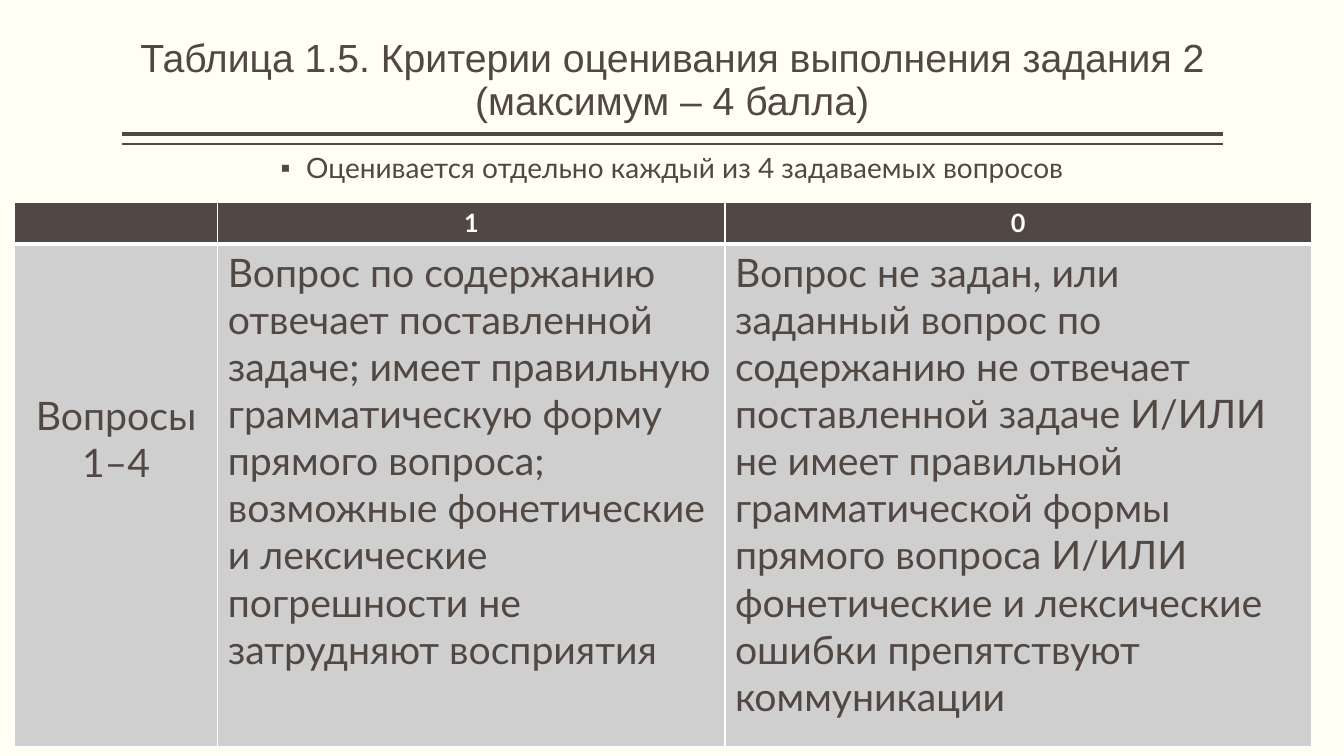
from dataclasses import dataclass

from lxml.etree import SubElement
from pptx import Presentation
from pptx.dml.color import RGBColor
from pptx.enum.shapes import MSO_CONNECTOR as Link
from pptx.enum.text import MSO_ANCHOR as Anchor
from pptx.enum.text import MSO_AUTO_SIZE as Fit
from pptx.enum.text import PP_ALIGN as Align
from pptx.oxml.ns import qn
from pptx.util import Cm, Pt

CREAM = RGBColor(0xFF, 0xFF, 0xF3)
BROWN = RGBColor(0x51, 0x48, 0x43)
GREY = RGBColor(0xD0, 0xCF, 0xCF)
WHITE = RGBColor(0xFF, 0xFF, 0xFF)

LEFT, WIDTH = 3.07, 27.74
COLS = (5.13, 12.78, 14.78)
ROWS = (0.99, 12.67)


@dataclass
class Rule:
    top: float
    weight: float


@dataclass
class Entry:
    text: str
    align: Align = Align.LEFT
    pad: float = 0.13


@dataclass
class Look:
    fill: RGBColor
    color: RGBColor
    size: int
    bold: bool
    above: int
    below: int


RULES = (Rule(3.38, 3), Rule(3.63, 1))

HEAD = Look(BROWN, WHITE, 18, True, 1, 3)
BODY = Look(GREY, BROWN, 28, False, 3, 1)

TABLE = (
    (HEAD, (Entry(""), Entry("1", Align.CENTER), Entry("0", Align.CENTER))),
    (BODY, (
        Entry("Вопросы 1–4", Align.CENTER, 3.73),
        Entry("Вопрос по содержанию отвечает поставленной задаче; имеет "
              "правильную грамматическую форму прямого вопроса; возможные "
              "фонетические и лексические погрешности не затрудняют "
              "восприятия"),
        Entry("Вопрос не задан, или заданный вопрос по содержанию не "
              "отвечает поставленной задаче И/ИЛИ не имеет правильной "
              "грамматической формы прямого вопроса И/ИЛИ фонетические и "
              "лексические ошибки препятствуют коммуникации"),
    )),
)


def style(para, face: str, size: int, color: RGBColor, bold: bool = False) -> None:
    for run in para.runs:
        font = run.font
        font.name, font.size, font.bold = face, Pt(size), bold
        font.color.rgb = color


def write(holder, text: str, top: float, height: float, face: str, size: int,
          anchor: Anchor):
    """Place and fill a placeholder; return its paragraph."""
    holder.left, holder.top = Cm(LEFT), Cm(top)
    holder.width, holder.height = Cm(WIDTH), Cm(height)
    frame = holder.text_frame
    frame.text = text
    frame.word_wrap, frame.auto_size = True, Fit.NONE
    frame.vertical_anchor = anchor
    frame.margin_left = frame.margin_right = 0
    frame.margin_top = frame.margin_bottom = Cm(0.13)
    para = frame.paragraphs[0]
    para.alignment, para.line_spacing = Align.CENTER, 0.9
    style(para, face, size, BROWN)
    return para


def bullet(para, mark: str) -> None:
    props = para._p.get_or_add_pPr()
    props.set("marL", str(Cm(0.64)))
    props.set("indent", str(-Cm(0.64)))
    SubElement(props, qn("a:buChar"), char=mark)


def draw_rule(slide, rule: Rule) -> None:
    line = slide.shapes.add_connector(
        Link.STRAIGHT, Cm(LEFT), Cm(rule.top), Cm(LEFT + WIDTH), Cm(rule.top))
    line.line.color.rgb, line.line.width = BROWN, Pt(rule.weight)
    SubElement(line._element.spPr, qn("a:effectLst"))


def border(cell, look: Look) -> None:
    props = cell._tc.get_or_add_tcPr()
    edges = {"lnL": 1, "lnR": 1, "lnT": look.above, "lnB": look.below}
    for tag, weight in edges.items():
        edge = SubElement(props, qn(f"a:{tag}"), w=str(Pt(weight)))
        fill = SubElement(edge, qn("a:solidFill"))
        SubElement(fill, qn("a:srgbClr"), val=str(WHITE))


def fill_cell(cell, entry: Entry, look: Look) -> None:
    border(cell, look)
    cell.fill.solid()
    cell.fill.fore_color.rgb = look.fill
    cell.margin_top = Cm(entry.pad)
    cell.text_frame.text = entry.text
    para = cell.text_frame.paragraphs[0]
    para.alignment = entry.align
    style(para, "Lato", look.size, look.color, look.bold)


def draw_table(slide) -> None:
    grid = slide.shapes.add_table(
        len(ROWS), len(COLS), Cm(0.36), Cm(5.11), Cm(sum(COLS)), Cm(sum(ROWS))).table
    grid.horz_banding = False
    for col, width in zip(grid.columns, COLS):
        col.width = Cm(width)
    for row, height, (look, entries) in zip(grid.rows, ROWS, TABLE):
        row.height = Cm(height)
        for cell, entry in zip(row.cells, entries):
            fill_cell(cell, entry, look)


def main() -> None:
    deck = Presentation()
    deck.slide_width, deck.slide_height = Cm(33.87), Cm(19.05)
    slide = deck.slides.add_slide(deck.slide_layouts[1])
    slide.background.fill.solid()
    slide.background.fill.fore_color.rgb = CREAM

    # Heading and the double rule under it
    write(slide.shapes.title,
          "Таблица 1.5. Критерии оценивания выполнения задания 2 "
          "(максимум – 4 балла)", 0.2, 3.05, "Arial", 28, Anchor.BOTTOM)
    for rule in RULES:
        draw_rule(slide, rule)

    # Note above the table
    note = write(slide.placeholders[1],
                 "Оценивается отдельно каждый из 4 задаваемых вопросов",
                 3.76, 1.07, "Lato", 20, Anchor.TOP)
    note.space_before = Pt(18)
    bullet(note, "▪")

    # Criteria
    draw_table(slide)
    deck.save("out.pptx")


if __name__ == "__main__":
    main()
